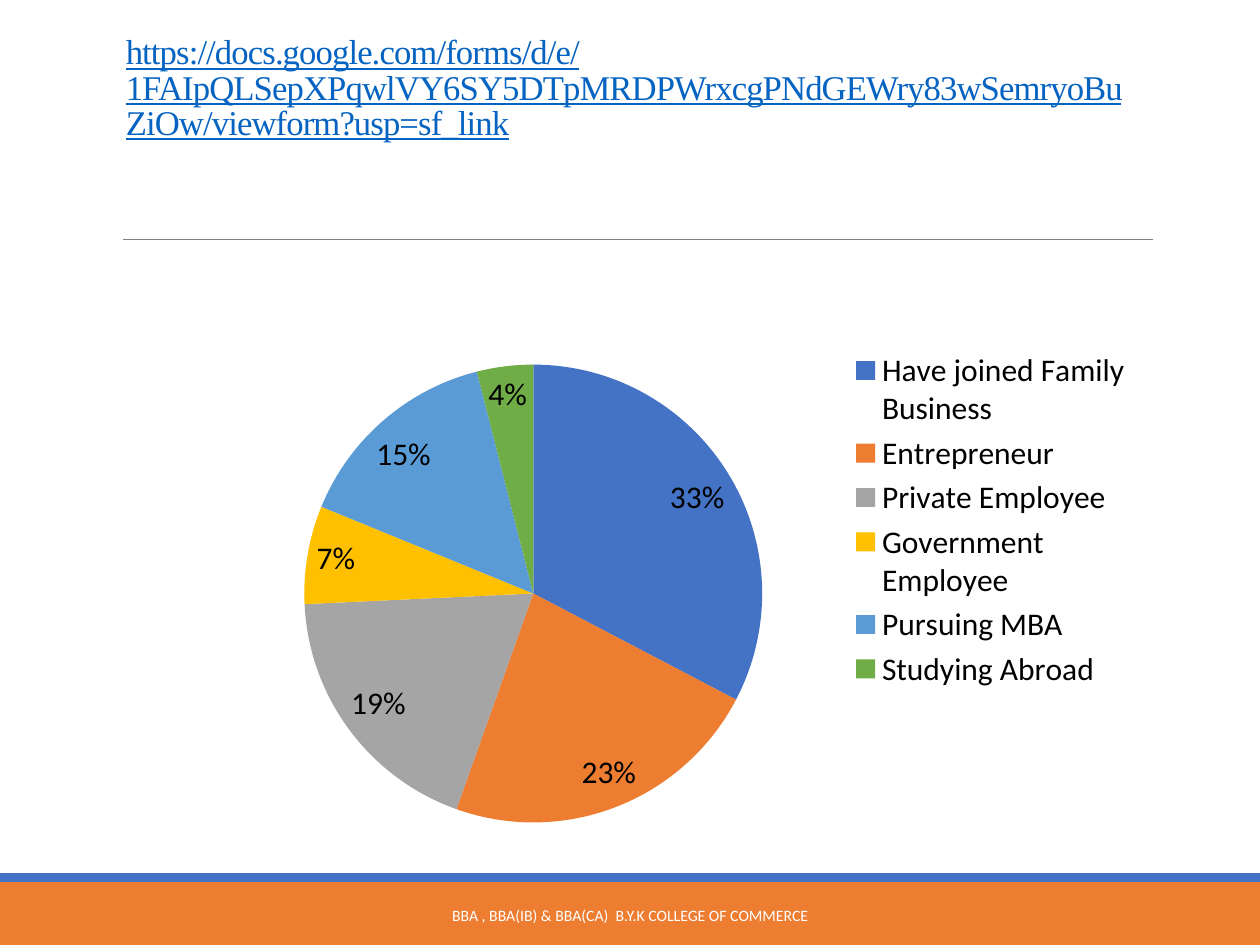
from lxml.etree import SubElement
from pptx import Presentation
from pptx.chart.data import CategoryChartData
from pptx.dml.color import RGBColor
from pptx.enum.chart import XL_CHART_TYPE, XL_LABEL_POSITION, XL_LEGEND_POSITION
from pptx.enum.shapes import MSO_CONNECTOR, MSO_SHAPE
from pptx.enum.text import MSO_ANCHOR, PP_ALIGN
from pptx.oxml.ns import qn
from pptx.util import Pt

LINK = ("https://docs.google.com/forms/d/e/"
        "1FAIpQLSepXPqwlVY6SY5DTpMRDPWrxcgPNdGEWry83wSemryoBuZiOw"
        "/viewform?usp=sf_link")
FOOT = "BBA , BBA(IB) & BBA(CA)  B.Y.K COLLEGE OF COMMERCE"
PARTS = [
    ("Have joined Family Business", 33, "4472C4"),
    ("Entrepreneur", 23, "ED7D31"),
    ("Private Employee", 19, "A5A5A5"),
    ("Government Employee", 7, "FFC000"),
    ("Pursuing MBA", 15, "5B9BD5"),
    ("Studying Abroad", 4, "70AD47"),
]
PLOT = {"x": 0.1, "y": 0.24, "w": 0.49, "h": 0.73}


def paint(part, color):
    part.solid()
    part.fore_color.rgb = RGBColor.from_string(color)


def style(font, name, size, color):
    font.name = name
    font.size = Pt(size)
    paint(font.fill, color)


def add_text(slide, box, text, name, size, color):
    frame = slide.shapes.add_textbox(*map(Pt, box)).text_frame
    frame.word_wrap = True
    para = frame.paragraphs[0]
    para.text = text
    style(para.font, name, size, color)
    return frame, para


def add_bar(slide, box, color):
    bar = slide.shapes.add_shape(MSO_SHAPE.RECTANGLE, *map(Pt, box))
    bar.shadow.inherit = False
    paint(bar.fill, color)
    bar.line.fill.background()


def add_head(slide, box):
    left, top, width, height = box
    frame, para = add_text(slide, box, LINK, "Times New Roman", 19.8, "0563C1")
    frame.margin_top = 0
    frame.vertical_anchor = MSO_ANCHOR.TOP
    para.line_spacing = 0.85
    para.font.underline = True
    para.runs[0]._r.get_or_add_rPr().set("spc", "-50")
    base = top + height
    rule = slide.shapes.add_connector(
        MSO_CONNECTOR.STRAIGHT, Pt(left + 5.6), Pt(base), Pt(left + width), Pt(base))
    rule.line.width = Pt(0.5)
    paint(rule.line.fill, "808080")
    SubElement(rule._element.spPr, qn("a:effectLst"))


def add_pie(slide, box):
    data = CategoryChartData()
    data.categories = [name for name, _, _ in PARTS]
    data.add_series("Series 1", [value for _, value, _ in PARTS])
    chart = slide.shapes.add_chart(XL_CHART_TYPE.PIE, *map(Pt, box), data).chart
    style(chart.font, "Calibri", 18, "000000")
    chart.has_title = False
    chart.has_legend = True
    chart.legend.position = XL_LEGEND_POSITION.RIGHT
    chart.legend.include_in_layout = False

    plot = chart.plots[0]
    plot.vary_by_categories = True
    for spot, (_, _, color) in enumerate(PARTS):
        paint(plot.series[0].points[spot].format.fill, color)
    plot.has_data_labels = True
    labels = plot.data_labels
    labels.show_value = False
    labels.show_percentage = True
    labels.number_format = "0%"
    labels.number_format_is_linked = False
    labels.position = XL_LABEL_POSITION.BEST_FIT
    style(labels.font, "Calibri", 18, "000000")
    set_plot(chart)


def set_plot(chart):
    area = chart._chartSpace.chart.plotArea
    for old in area.findall(qn("c:layout")):
        area.remove(old)
    layout = SubElement(area, qn("c:layout"))
    area.insert(0, layout)
    manual = SubElement(layout, qn("c:manualLayout"))
    rules = {"layoutTarget": "inner", "xMode": "edge", "yMode": "edge", **PLOT}
    for tag, value in rules.items():
        SubElement(manual, qn(f"c:{tag}")).set("val", str(value))


def add_foot(slide, box):
    left, top, width, height = box
    band = 5
    add_bar(slide, (left, top + band, width, height - band), "ED7D31")
    add_bar(slide, (left, top, width, band), "4472C4")
    wide = 285
    frame, para = add_text(
        slide, (left + (width - wide) / 2, top + 9.4, wide, 28.8),
        FOOT, "Calibri", 9, "FFFFFF")
    frame.vertical_anchor = MSO_ANCHOR.MIDDLE
    para.alignment = PP_ALIGN.CENTER


def main():
    deck = Presentation()
    deck.slide_width, deck.slide_height = Pt(720), Pt(540)
    slide = deck.slides.add_slide(deck.slide_layouts[6])
    add_foot(slide, (0, 499, 720, 41))
    add_head(slide, (64.8, 20.8, 594, 116))
    add_pie(slide, (120.5, 96, 534, 402))
    deck.save("out.pptx")


if __name__ == "__main__":
    main()
